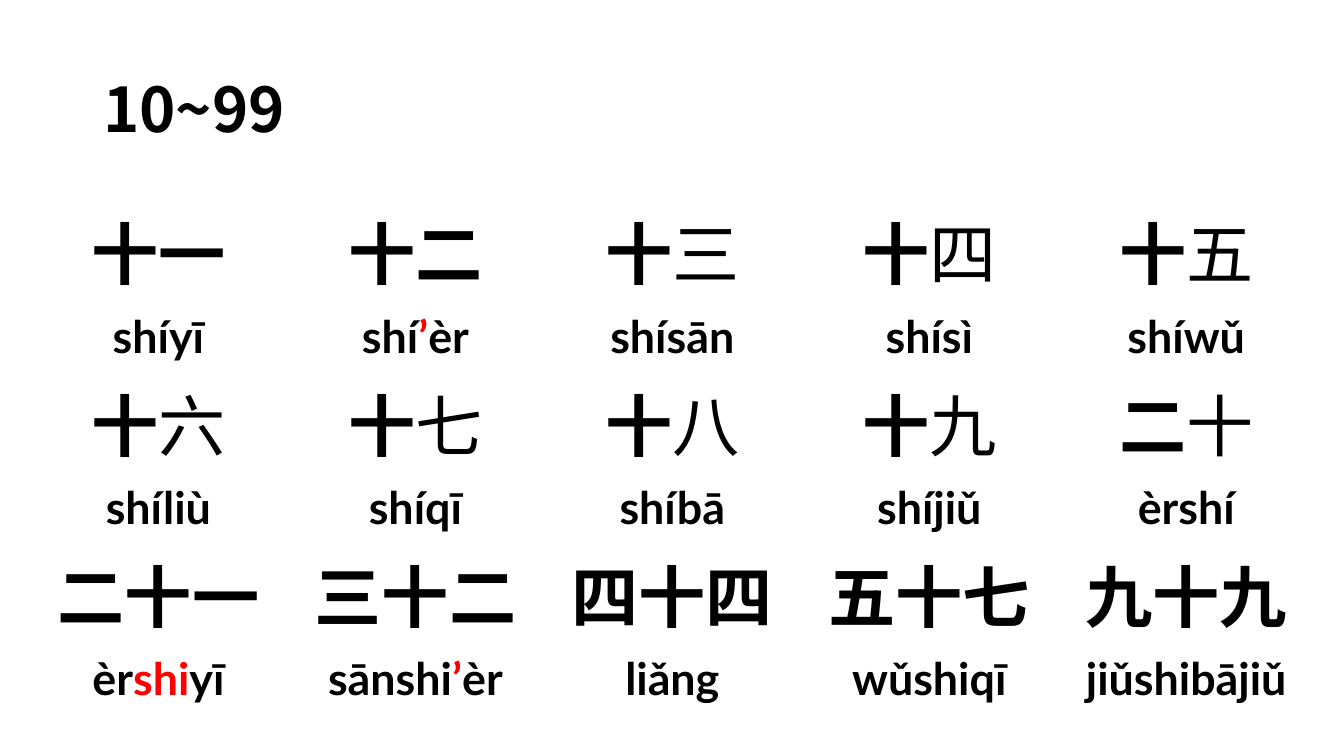
from pptx import Presentation
from pptx.dml.color import RGBColor
from pptx.enum.text import MSO_ANCHOR as Anchor, MSO_AUTO_SIZE as Fit, PP_ALIGN as Align
from pptx.oxml.ns import qn
from pptx.util import Emu, Pt
from lxml.etree import SubElement

JP, SC, LATO = "Noto Sans CJK JP", "Noto Sans CJK SC", "Lato"
BLACK, RED = "000000", "FF0000"

# Odd parts between bars are marked: plain in Han rows, red in pinyin rows
WORDS = [
    (JP, "十一 十二 十|三 十|四 十|五", "shíyī shí|’|èr shísān shísì shíwǔ"),
    (JP, "十|六 十|七 十|八 十|九 二|十", "shíliù shíqī shíbā shíjiǔ èrshí"),
    (SC, "二十一 三十二 四十四 五十七 九十九",
     "èr|shi|yī sānshi|’|èr liǎng wǔshiqī jiǔshibājiǔ"),
]


def px(n):
    return Emu(round(n * 914400 / 100.8))


def color(code):
    return RGBColor.from_string(code)


class Deck:
    def __init__(self):
        self.prs = Presentation()
        self.prs.slide_width, self.prs.slide_height = px(1344), px(756)
        self.slide = self.prs.slides.add_slide(self.prs.slide_layouts[5])

    def run(self, para, text, size, face, bold=True, tint=BLACK):
        run = para.add_run()
        run.text = text
        font = run.font
        font.size, font.name, font.bold = Pt(size), face, bold
        font.color.rgb = color(tint)
        # East Asian glyphs take their face from a:ea
        SubElement(run._r.get_or_add_rPr(), qn("a:ea")).set("typeface", face)

    def title(self, text, left, top, width, height):
        box = self.slide.shapes.title
        box.left, box.top, box.width, box.height = map(px, (left, top, width, height))
        frame = box.text_frame
        frame.auto_size, frame.vertical_anchor = Fit.NONE, Anchor.MIDDLE
        para = frame.paragraphs[0]
        para.alignment, para.line_spacing = Align.LEFT, 0.9
        self.run(para, text, 44, JP)

    def cell(self, cell):
        cell.fill.background()
        cell.margin_left = cell.margin_right = px(5)
        cell.margin_top = cell.margin_bottom = px(5)
        para = cell.text_frame.paragraphs[0]
        para.alignment = Align.CENTER
        return para

    def table(self, words, left, top, wide, tall, low):
        rows, cols = 2 * len(words), 5
        grid = self.slide.shapes.add_table(
            rows, cols, px(left), px(top), px(cols * wide), px(len(words) * (tall + low))).table
        grid.first_row = grid.horz_banding = False
        for col in grid.columns:
            col.width = px(wide)
        for pair, (face, han, pinyin) in enumerate(words):
            top_row, low_row = 2 * pair, 2 * pair + 1
            grid.rows[top_row].height, grid.rows[low_row].height = px(tall), px(low)
            for col, (sign, sound) in enumerate(zip(han.split(), pinyin.split())):
                para = self.cell(grid.cell(top_row, col))
                for i, part in enumerate(sign.split("|")):
                    self.run(para, part, 48, SC if i % 2 else face, bold=i % 2 == 0)
                para = self.cell(grid.cell(low_row, col))
                for i, part in enumerate(sound.split("|")):
                    self.run(para, part, 32, LATO, tint=RED if i % 2 else BLACK)


def main():
    deck = Deck()
    # Heading
    deck.title("10~99", 93, 40, 1159, 146)
    # Numbers above their pinyin
    deck.table(WORDS, 30, 197, 257, 107, 64)
    deck.prs.save("out.pptx")


if __name__ == "__main__":
    main()
